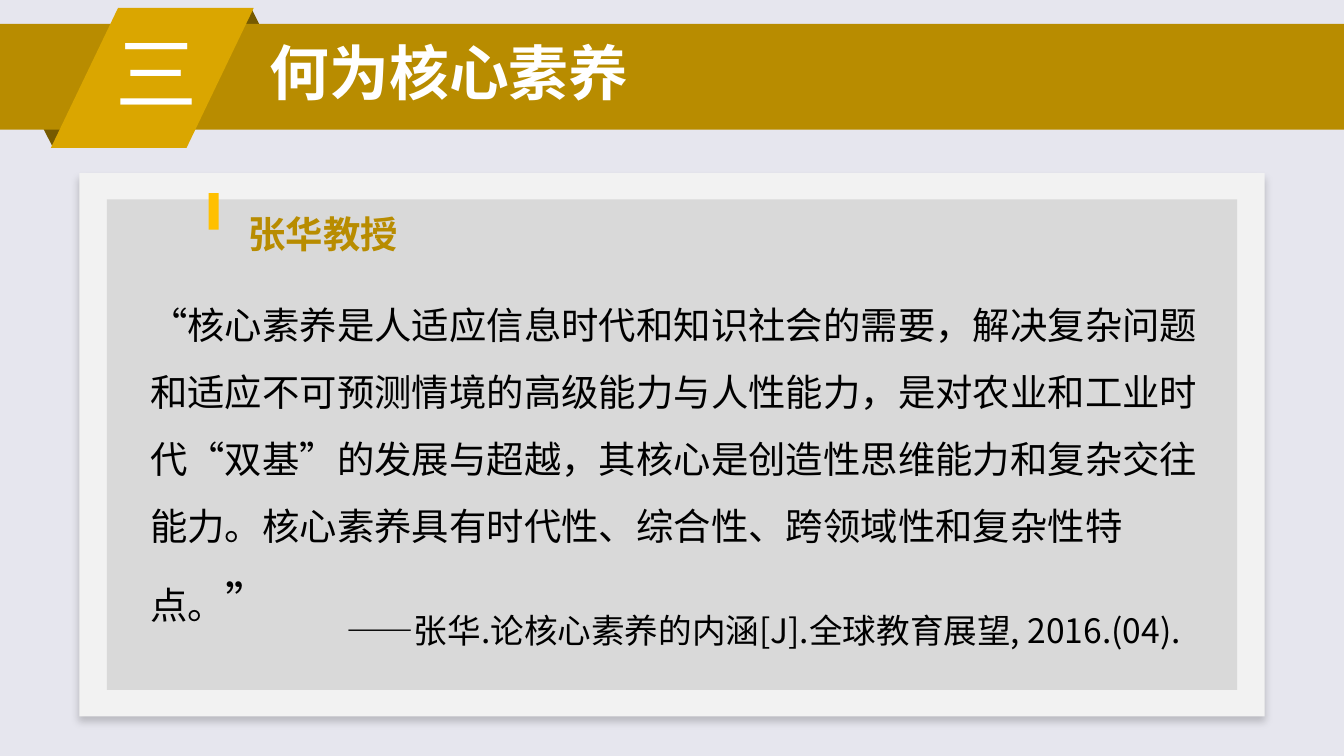
"""Build the slide on core competencies with its ribbon heading and quotation panel."""
from lxml.etree import SubElement
from pptx import Presentation
from pptx.dml.color import RGBColor
from pptx.enum.lang import MSO_LANGUAGE_ID as LANG
from pptx.enum.shapes import MSO_SHAPE as SHAPE
from pptx.enum.text import MSO_ANCHOR as ANCHOR
from pptx.oxml.ns import qn
from pptx.util import Pt

FONT = "Noto Sans CJK SC"
DARK, GOLD, BRIGHT, AMBER = "765A00", "B88C00", "DAA600", "FFC000"
WHITE, BLACK, PANEL, GREY = "FFFFFF", "000000", "F2F2F2", "D9D9D9"


def rgb(value):
    return RGBColor.from_string(value)


class Deck:
    def __init__(self, prs, background):
        self.s = prs.slides.add_slide(prs.slide_layouts[6])
        fill = self.s.background.fill
        fill.solid()
        fill.fore_color.rgb = rgb(background)

    def shape(self, kind, box, color):
        sp = self.s.shapes.add_shape(kind, *map(Pt, box))
        sp.shadow.inherit = False
        sp.fill.solid()
        sp.fill.fore_color.rgb = rgb(color)
        sp.line.fill.background()
        return sp

    def shadow(self, sp, blur, dist, alpha):
        effects = sp._element.spPr.find(qn("a:effectLst"))
        outer = SubElement(effects, qn("a:outerShdw"), blurRad=str(Pt(blur)),
                           dist=str(Pt(dist)), dir="5400000", algn="t", rotWithShape="0")
        color = SubElement(outer, qn("a:srgbClr"), val=BLACK)
        SubElement(color, qn("a:alpha"), val=str(alpha * 1000))

    def text(self, box, text, size, color, bold=False, anchor=ANCHOR.TOP):
        tf = self.s.shapes.add_textbox(*map(Pt, box)).text_frame
        tf.word_wrap = True
        tf.vertical_anchor = anchor
        p = tf.paragraphs[0]
        p.add_run().text = text
        font = p.font
        font.name, font.size, font.bold = FONT, Pt(size), bold
        font.color.rgb = rgb(color)
        font.language_id = LANG.SIMPLIFIED_CHINESE
        latin = p._p.pPr.find(qn("a:defRPr")).find(qn("a:latin"))
        latin.addnext(latin.makeelement(qn("a:ea"), {"typeface": FONT}))
        return p


def main():
    prs = Presentation()
    prs.slide_width, prs.slide_height = Pt(720), Pt(405)
    deck = Deck(prs, "E6E6EE")

    deck.shape(SHAPE.ISOSCELES_TRIANGLE, (115.9, 4.3, 37.4, 37.4), DARK)
    fold = deck.shape(SHAPE.ISOSCELES_TRIANGLE, (9.4, 41.2, 37.4, 37.4), DARK)
    fold.rotation = 180
    deck.shape(SHAPE.RECTANGLE, (0, 12.8, 720, 56.7), GOLD)
    ribbon = deck.shape(SHAPE.PARALLELOGRAM, (27.2, 4.3, 108.7, 75), BRIGHT)
    ribbon.adjustments[0] = 0.48

    panel = deck.shape(SHAPE.RECTANGLE, (42.5, 92.8, 635, 291), PANEL)
    deck.shadow(panel, 4, 3, 19)
    deck.shape(SHAPE.RECTANGLE, (57.2, 106.8, 605.5, 262.8), GREY)
    deck.shape(SHAPE.RECTANGLE, (111.8, 103.4, 5.4, 19.6), AMBER)

    quote = deck.text(
        (73.4, 146.2, 589.7, 162.7),
        "“核心素养是人适应信息时代和知识社会的需要，解决复杂问题和适应不可预测情境的高级能力与人性能力，"
        "是对农业和工业时代“双基”的发展与超越，其核心是创造性思维能力和复杂交往能力。"
        "核心素养具有时代性、综合性、跨领域性和复杂性特点。", 20, BLACK)
    quote.line_spacing = 1.5
    quote.space_before = Pt(4)
    r = quote.add_run()
    r.text = "”"
    r.font.size = Pt(24)

    deck.text((137.5, 10.1, 582.5, 56.9), "何为核心素养", 32, WHITE, True, ANCHOR.MIDDLE)
    deck.text((54.7, 8.6, 72.7, 60.5), "三", 44, WHITE)
    deck.text((126, 109.4, 158.4, 31.7), "张华教授", 20, GOLD, True)
    deck.text((178.6, 323.3, 510.5, 28.8),
              "——张华.论核心素养的内涵[J].全球教育展望, 2016.(04).", 18, BLACK)

    prs.save("out.pptx")


if __name__ == "__main__":
    main()
